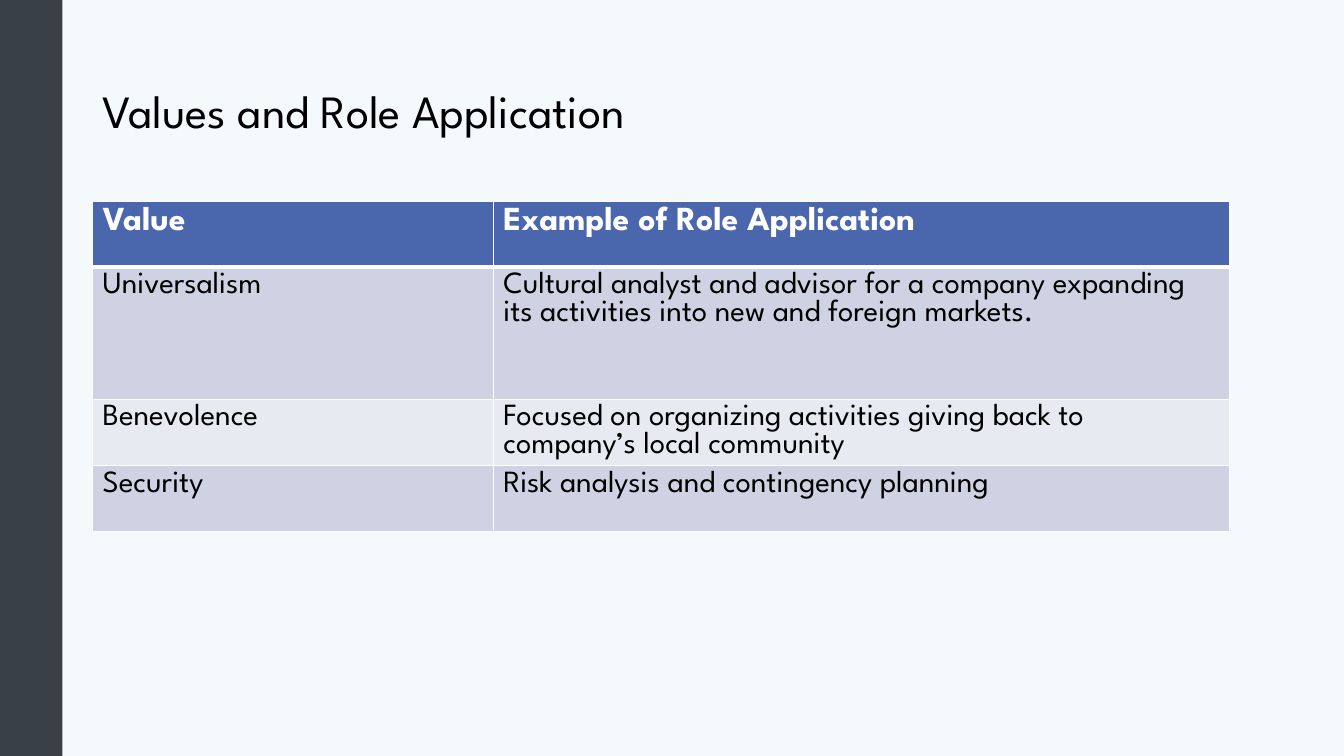
from pptx import Presentation
from pptx.dml.color import RGBColor
from pptx.enum.shapes import MSO_SHAPE
from pptx.enum.text import MSO_ANCHOR, PP_ALIGN
from pptx.util import Pt
from lxml.etree import SubElement
from pptx.oxml.ns import qn

COLORS = {
    "background": "F4F9FC",
    "sidebar": "3A4047",
    "header": "4A66AC",
    "odd_row": "CED2E2",
    "even_row": "E8EAF1",
    "white": "FFFFFF",
    "black": "000000",
}
FONT = "League Spartan"


def write_text(text_frame, text, size, color="black", bold=False, line_spacing=None):
    paragraph = text_frame.paragraphs[0]
    paragraph.alignment = PP_ALIGN.LEFT
    if line_spacing:
        paragraph.line_spacing = line_spacing
    run = paragraph.add_run()
    run.text = text
    run.font.name = FONT
    run.font.size = Pt(size)
    run.font.bold = bold
    run.font.color.rgb = RGBColor.from_string(COLORS[color])


def add_border(cell, side, width):
    line = SubElement(cell._tc.get_or_add_tcPr(), qn(f"a:{side}"), w=str(Pt(width)))
    fill = SubElement(line, qn("a:solidFill"))
    SubElement(fill, qn("a:srgbClr"), val=COLORS["white"])


presentation = Presentation()
presentation.slide_width = Pt(960)
presentation.slide_height = Pt(540)
slide = presentation.slides.add_slide(presentation.slide_layouts[5])
slide.background.fill.solid()
slide.background.fill.fore_color.rgb = RGBColor.from_string(COLORS["background"])

sidebar = slide.shapes.add_shape(MSO_SHAPE.RECTANGLE, Pt(0), Pt(0), Pt(44.6), Pt(540))
sidebar.shadow.inherit = False
sidebar.fill.solid()
sidebar.fill.fore_color.rgb = RGBColor.from_string(COLORS["sidebar"])
sidebar.line.fill.background()

title = slide.shapes.title
title.left, title.top, title.width, title.height = Pt(66.2), Pt(28.8), Pt(828), Pt(104.4)
title.text_frame.vertical_anchor = MSO_ANCHOR.MIDDLE
title.text_frame.word_wrap = True
write_text(title.text_frame, "Values and Role Application", size=33, line_spacing=0.9)

values = [
    ("Value", "Example of Role Application"),
    ("Universalism", "Cultural analyst and advisor for a company expanding its activities into new and foreign markets."),
    ("Benevolence", "Focused on organizing activities giving back to company’s local community"),
    ("Security", "Risk analysis and contingency planning"),
]
column_widths = [286.2, 526]
row_heights = [46.8, 94.3, 46.8, 46.8]

table = slide.shapes.add_table(
    len(values), len(column_widths), Pt(66.2), Pt(144), Pt(sum(column_widths)), Pt(sum(row_heights))
).table
for column, width in zip(table.columns, column_widths):
    column.width = Pt(width)
for row, height in zip(table.rows, row_heights):
    row.height = Pt(height)

for row_index, texts in enumerate(values):
    is_header = row_index == 0
    fill_name = "header" if is_header else "odd_row" if row_index % 2 else "even_row"
    for column_index, text in enumerate(texts):
        cell = table.cell(row_index, column_index)
        cell.margin_left = cell.margin_right = Pt(7.2)
        cell.margin_top = cell.margin_bottom = Pt(3.6)
        for side in ("lnL", "lnR", "lnT", "lnB"):
            beside_header = (row_index, side) in ((0, "lnB"), (1, "lnT"))
            add_border(cell, side, 3 if beside_header else 1)
        cell.fill.solid()
        cell.fill.fore_color.rgb = RGBColor.from_string(COLORS[fill_name])
        write_text(
            cell.text_frame,
            text,
            size=24 if is_header else 22,
            color="white" if is_header else "black",
            bold=is_header,
        )

presentation.save("out.pptx")
